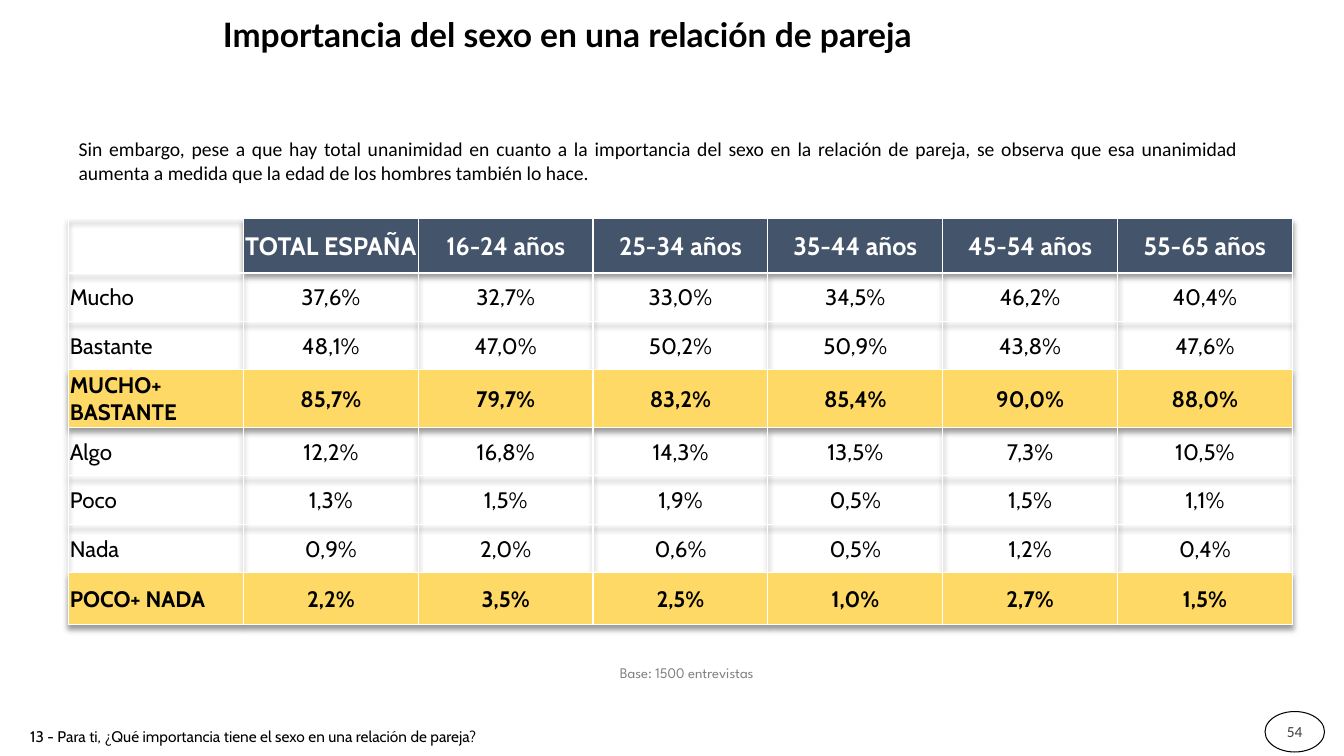
from lxml import etree
from pptx import Presentation
from pptx import util as u
from pptx.dml.color import RGBColor
from pptx.enum import shapes, text
from pptx.oxml import parse_xml
from pptx.oxml.ns import nsdecls, qn

Cm, Pt = u.Cm, u.Pt
LEFT, CENTER, JUSTIFY = text.PP_ALIGN.LEFT, text.PP_ALIGN.CENTER, text.PP_ALIGN.JUSTIFY
MIDDLE = text.MSO_ANCHOR.MIDDLE

BLACK = RGBColor(0x00, 0x00, 0x00)
WHITE = RGBColor(0xFF, 0xFF, 0xFF)
SLATE = RGBColor(0x44, 0x54, 0x6A)
YELLOW = RGBColor(0xFF, 0xD9, 0x66)
GRAY = RGBColor(0x80, 0x80, 0x80)
DARK_GRAY = RGBColor(0x40, 0x40, 0x40)

HEADINGS = ["", "TOTAL ESPAÑA", "16-24 años", "25-34 años", "35-44 años", "45-54 años", "55-65 años"]
ANSWERS = [
    ["Mucho", "37,6%", "32,7%", "33,0%", "34,5%", "46,2%", "40,4%"],
    ["Bastante", "48,1%", "47,0%", "50,2%", "50,9%", "43,8%", "47,6%"],
    ["MUCHO+ BASTANTE", "85,7%", "79,7%", "83,2%", "85,4%", "90,0%", "88,0%"],
    ["Algo", "12,2%", "16,8%", "14,3%", "13,5%", "7,3%", "10,5%"],
    ["Poco", "1,3%", "1,5%", "1,9%", "0,5%", "1,5%", "1,1%"],
    ["Nada", "0,9%", "2,0%", "0,6%", "0,5%", "1,2%", "0,4%"],
    ["POCO+ NADA", "2,2%", "3,5%", "2,5%", "1,0%", "2,7%", "1,5%"],
]
ROW_HEIGHTS = [1.37, 1.22, 1.22, 1.45, 1.22, 1.22, 1.22, 1.3]
TABLE_WIDTH = 30.84


def write(frame, words, align, color, **font_format):
    para = frame.paragraphs[0]
    para.alignment = align
    span = para.add_run()
    span.text = words
    span.font.color.rgb = color
    for name, value in font_format.items():
        setattr(span.font, name, value)


def add_text(page, place, words, align, color, anchor=text.MSO_ANCHOR.TOP, **font_format):
    frame = page.shapes.add_textbox(*map(Cm, place)).text_frame
    frame.word_wrap = True
    frame.vertical_anchor = anchor
    write(frame, words, align, color, **font_format)


def add_page_number(page, number):
    badge = page.shapes.add_shape(shapes.MSO_SHAPE.OVAL, Cm(31.88), Cm(17.93), Cm(1.5), Cm(1.02))
    badge.shadow.inherit = False
    badge.fill.solid()
    badge.fill.fore_color.rgb = WHITE
    color = badge.fill._xPr.find(qn("a:solidFill"))[0]
    etree.SubElement(color, qn("a:alpha"), val="70000")
    badge.line.color.rgb = BLACK
    badge.line.width = Pt(0.75)
    frame = badge.text_frame
    frame.margin_left = frame.margin_right = Cm(0.05)
    frame.vertical_anchor = MIDDLE
    write(frame, number, CENTER, DARK_GRAY, name="Calibri", size=Pt(11))


def add_borders(cell):
    properties = cell._tc.get_or_add_tcPr()
    for index, side in enumerate(("lnL", "lnR", "lnT", "lnB")):
        properties.insert(index, parse_xml(
            f'<a:{side} {nsdecls("a")} w="12700"><a:solidFill>'
            f'<a:srgbClr val="{WHITE}"/></a:solidFill></a:{side}>'))


def fill_cell(cell, words, align, fill, color, **font_format):
    layout = {"margin_left": Cm(0.03), "margin_right": Cm(0.03), "margin_top": Cm(0.03),
              "margin_bottom": Cm(0), "vertical_anchor": MIDDLE}
    for name, value in layout.items():
        setattr(cell, name, value)
    if fill is None:
        cell.fill.background()
    else:
        cell.fill.solid()
        cell.fill.fore_color.rgb = fill
    add_borders(cell)
    if words:
        write(cell.text_frame, words, align, color, name="Cabin", **font_format)


def add_answer_table(page):
    rows = [HEADINGS] + ANSWERS
    table = page.shapes.add_table(len(rows), len(HEADINGS), Cm(1.73), Cm(5.51),
                                  Cm(TABLE_WIDTH), Cm(sum(ROW_HEIGHTS))).table
    table.first_row = table.horz_banding = False
    # Soft shadow below the table
    table._tbl.tblPr.insert(0, parse_xml(
        f'<a:effectLst {nsdecls("a")}><a:outerShdw blurRad="50800" dist="38100" dir="5400000" '
        'algn="t" rotWithShape="0"><a:srgbClr val="000000"><a:alpha val="40000"/></a:srgbClr>'
        '</a:outerShdw></a:effectLst>'))
    for column in table.columns:
        column.width = Cm(TABLE_WIDTH / len(HEADINGS))
    for r, (values, height) in enumerate(zip(rows, ROW_HEIGHTS)):
        table.rows[r].height = Cm(height)
        heading = r == 0
        total = "+" in values[0]
        for c, value in enumerate(values):
            fill = SLATE if heading and value else YELLOW if total else None
            fill_cell(table.cell(r, c), value, CENTER if c else LEFT, fill,
                      WHITE if heading else BLACK,
                      size=Pt(18 if heading else 16), bold=heading or total)


def main():
    deck = Presentation()
    deck.slide_width, deck.slide_height = Cm(33.87), Cm(19.05)
    page = deck.slides.add_slide(deck.slide_layouts[6])

    # Page number and sample base
    add_page_number(page, "54")
    add_text(page, (14.58, 16.61, 5.46, 0.71), "Base: 1500 entrevistas", CENTER, GRAY,
             name="League Spartan", size=Pt(10.5))

    # Answers by age group
    add_answer_table(page)

    # Title, question and comment
    add_text(page, (3.81, 0.08, 20.98, 1.55), "Importancia del sexo en una relación de pareja",
             CENTER, BLACK, MIDDLE, name="Lato", size=Pt(24), bold=True)
    add_text(page, (0.51, 18.19, 18.59, 0.74),
             "13 - Para ti, ¿Qué importancia tiene el sexo en una relación de pareja?",
             LEFT, BLACK, name="Cabin", size=Pt(11))
    add_text(page, (1.73, 3.33, 29.74, 1.45),
             "Sin embargo, pese a que hay total unanimidad en cuanto a la importancia del sexo en la "
             "relación de pareja, se observa que esa unanimidad aumenta a medida que la edad de los "
             "hombres también lo hace.",
             JUSTIFY, BLACK, name="Calibri", size=Pt(14))

    deck.save("out.pptx")


if __name__ == "__main__":
    main()
